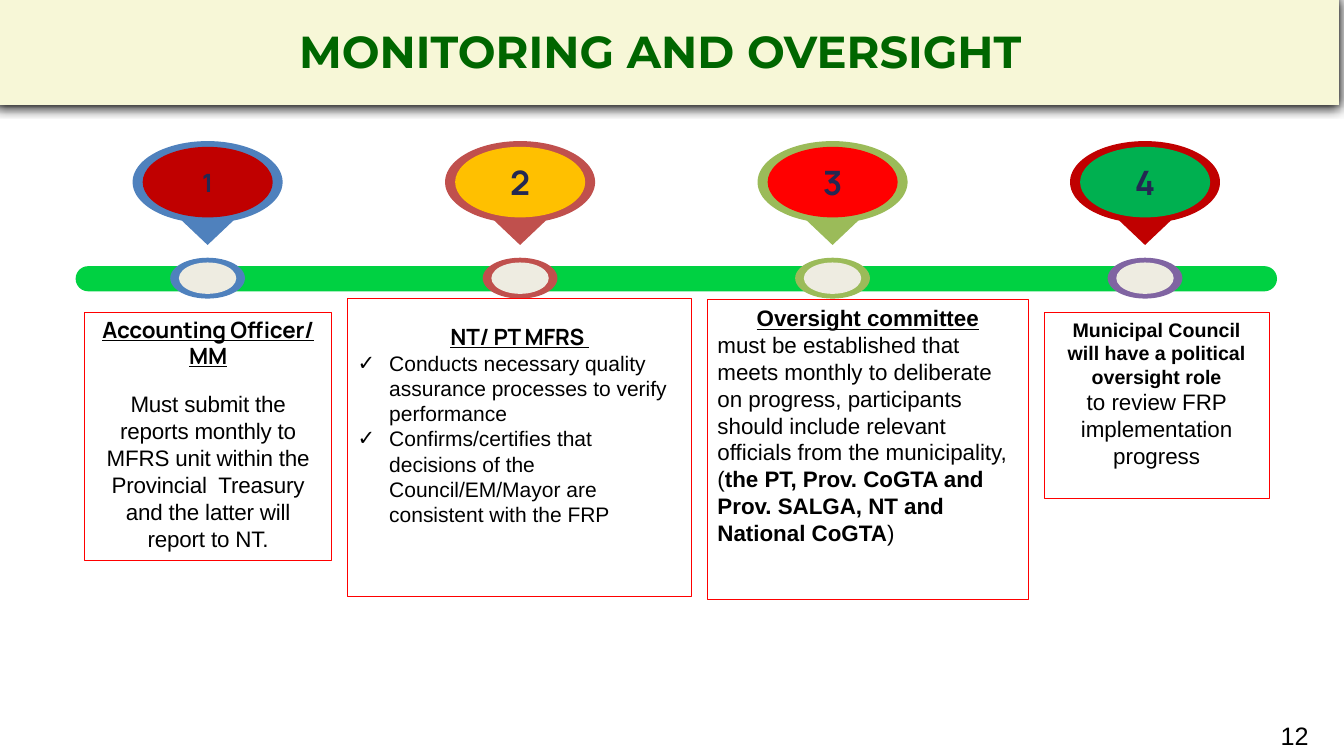
from math import cos, radians, sin

from lxml import etree
from pptx import Presentation
from pptx.dml.color import RGBColor
from pptx.enum.shapes import MSO_SHAPE
from pptx.enum.text import MSO_ANCHOR, MSO_AUTO_SIZE, PP_ALIGN
from pptx.oxml.ns import qn
from pptx.util import Pt

RECT, ROUND, OVAL = MSO_SHAPE.RECTANGLE, MSO_SHAPE.ROUNDED_RECTANGLE, MSO_SHAPE.OVAL
LEFT, MID, RIGHT = PP_ALIGN.LEFT, PP_ALIGN.CENTER, PP_ALIGN.RIGHT
TOP, CENTER = MSO_ANCHOR.TOP, MSO_ANCHOR.MIDDLE
FIXED = MSO_AUTO_SIZE.NONE

HEAD = dict(size=16, font="Manrope", bold=True, line=True, track=-0.1)
BODY = dict(size=16)
ITEM = dict(size=15)

STEPS = [
    ("1", 18, "4F81BD", "C00000", "4F81BD"),
    ("2", 24, "C0504D", "FFC000", "C0504D"),
    ("3", 24, "9BBB59", "FF0000", "9BBB59"),
    ("4", 24, "C00000", "00B050", "8064A2"),
]

# box, top inset, paragraphs (align, line pitch, space after, bullet, runs)
CARDS = [
    ((60.5, 223.2, 176.4, 177.1), 3.6, [
        (MID, 18.6, 15, None, [("Accounting Officer/ MM", HEAD)]),
        (MID, 19.2, 0, None, [
            ("Must submit the reports monthly to MFRS unit within the "
             "Provincial  Treasury and the latter will report to NT.",
             dict(size=16, track=-0.1))]),
    ]),
    ((248.4, 213.1, 245.5, 213.1), 18.6, [
        (MID, 18.6, 0, None, [("NT/ PT MFRS ", HEAD)]),
        (LEFT, 18, 0, "✓", [
            ("Conducts necessary quality assurance processes to verify performance", ITEM)]),
        (LEFT, 18, 0, "✓", [
            ("Confirms/certifies that decisions of the Council/EM/Mayor are "
             "consistent with the FRP", ITEM)]),
    ]),
    ((505.4, 213.8, 229, 214.6), 3.6, [
        (MID, 19.2, 0, None, [("Oversight committee", dict(size=16, bold=True, line=True))]),
        (LEFT, 19.2, 0, None, [
            ("must be established that meets monthly to deliberate on progress, "
             "participants should include relevant officials from the municipality, (", BODY),
            ("the PT, Prov. CoGTA and Prov. SALGA, NT and National CoGTA",
             dict(size=16, bold=True)),
            (")", BODY)]),
    ]),
    ((745.9, 223.2, 160.6, 133.2), 3.6, [
        (MID, 16.8, 0, None, [
            ("Municipal Council will have a political oversight role",
             dict(size=14, bold=True))]),
        (MID, 19.2, 0, None, [("to review FRP implementation progress", BODY)]),
    ]),
]


def tint(code):
    """Return the colour of a hex string."""
    return RGBColor.from_string(code)


def paint(shape, fill=None, line=None):
    """Set fill and line, and drop the shadow."""
    shape.shadow.inherit = False
    if fill:
        shape.fill.solid()
        shape.fill.fore_color.rgb = tint(fill)
    else:
        shape.fill.background()
    if line:
        shape.line.color.rgb = tint(line)
        shape.line.width = Pt(0.75)
    else:
        shape.line.fill.background()
    return shape


def form(slide, kind, box, fill=None, line=None):
    """Add a painted preset shape in a box."""
    return paint(slide.shapes.add_shape(kind, *map(Pt, box)), fill, line)


def frame(shape, anchor=TOP, side=7.2, top=3.6):
    """Prepare the text frame of a shape."""
    text = shape.text_frame
    text.word_wrap = True
    text.auto_size = FIXED
    text.vertical_anchor = anchor
    text.margin_left = text.margin_right = Pt(side)
    text.margin_top = Pt(top)
    text.margin_bottom = Pt(3.6)
    return text


def write(para, words, size, font="Arial", color="000000", bold=False, line=False, track=0):
    """Add one run to a paragraph."""
    run = para.add_run()
    run.text = words
    run.font.size = Pt(size)
    run.font.name = font
    run.font.bold = bold
    run.font.underline = line
    run.font.color.rgb = tint(color)
    if track:
        run.font._element.set("spc", str(round(track * 100)))


def mark(para, sign):
    """Give a paragraph a hanging bullet."""
    props = para._p.get_or_add_pPr()
    props.set("marL", str(Pt(22.5)))
    props.set("indent", str(Pt(-22.5)))
    etree.SubElement(props, qn("a:buFont")).set("typeface", "Wingdings")
    props[-1].set("typeface", "Arial")
    etree.SubElement(props, qn("a:buChar")).set("char", sign)


def banner(slide, box):
    """Format the title as a shaded band across the top."""
    title = slide.shapes.title
    title.left, title.top, title.width, title.height = map(Pt, box)
    paint(title, "F7F7D7")
    glow = etree.SubElement(
        title._element.spPr.find(qn("a:effectLst")), qn("a:outerShdw"),
        blurRad=str(Pt(8.5)), dist=str(Pt(1)), dir="5400000", rotWithShape="0")
    etree.SubElement(glow, qn("a:srgbClr"), val="000000")
    para = frame(title, CENTER).paragraphs[0]
    para.alignment = MID
    write(para, "MONITORING AND OVERSIGHT ", 32, "Montserrat", "006600", True)


def pin(slide, mid, top, step):
    """Draw a numbered pin and the ring below it."""
    label, size, rim, core, ring = step
    wide, high = 53.6, 29.3
    hub = top + high
    arc = [(mid + wide * cos(radians(a)), hub + high * sin(radians(a)))
           for a in range(110, 431, 4)]
    path = slide.shapes.build_freeform(Pt(mid), Pt(top + 74.2))
    path.add_line_segments([(Pt(x), Pt(y)) for x, y in arc], close=True)
    paint(path.convert_to_shape(), rim)
    disc = form(slide, OVAL, (mid - 46.4, hub - 25.2, 92.9, 50.4), core)
    para = frame(disc, CENTER, 0).paragraphs[0]
    para.alignment = MID
    write(para, label, size, "Manrope", "242852", True, track=-2.2)
    for w, h, fill in ((53.4, 29.2, ring), (41, 22.4, "EEECE1")):
        form(slide, OVAL, (mid - w / 2, top + 97.9 - h / 2, w, h), fill)


def track(slide, box):
    """Draw the timeline bar with its evenly spaced pins."""
    left, top, _, _ = box
    bar = form(slide, ROUND, box, "00D142")
    bar.adjustments[0] = 0.5
    for i, step in enumerate(STEPS):
        pin(slide, left + 94.3 + 223.2 * i, top - 89.3, step)


def card(slide, box, inset, paras):
    """Write an outlined text card."""
    text = frame(form(slide, RECT, box, line="FF0000"), top=inset)
    for i, (align, pitch, after, sign, runs) in enumerate(paras):
        para = text.add_paragraph() if i else text.paragraphs[0]
        para.alignment = align
        para.line_spacing = Pt(pitch)
        para.space_after = Pt(after)
        if sign:
            mark(para, sign)
        for words, style in runs:
            write(para, words, **style)


def folio(slide, box):
    """Write the page number."""
    para = frame(slide.shapes.add_textbox(*map(Pt, box))).paragraphs[0]
    para.alignment = RIGHT
    write(para, "12", 18)


def main():
    """Build and save the slide."""
    deck = Presentation()
    deck.slide_width, deck.slide_height = Pt(960), Pt(540)
    slide = deck.slides.add_slide(deck.slide_layouts[5])
    banner(slide, (-3.6, -2.9, 960, 77.8))
    track(slide, (54, 190.1, 858.2, 18))
    for box, inset, paras in CARDS:
        card(slide, box, inset, paras)
    folio(slide, (689.8, 511.2, 252, 28.8))
    deck.save("out.pptx")


if __name__ == "__main__":
    main()
